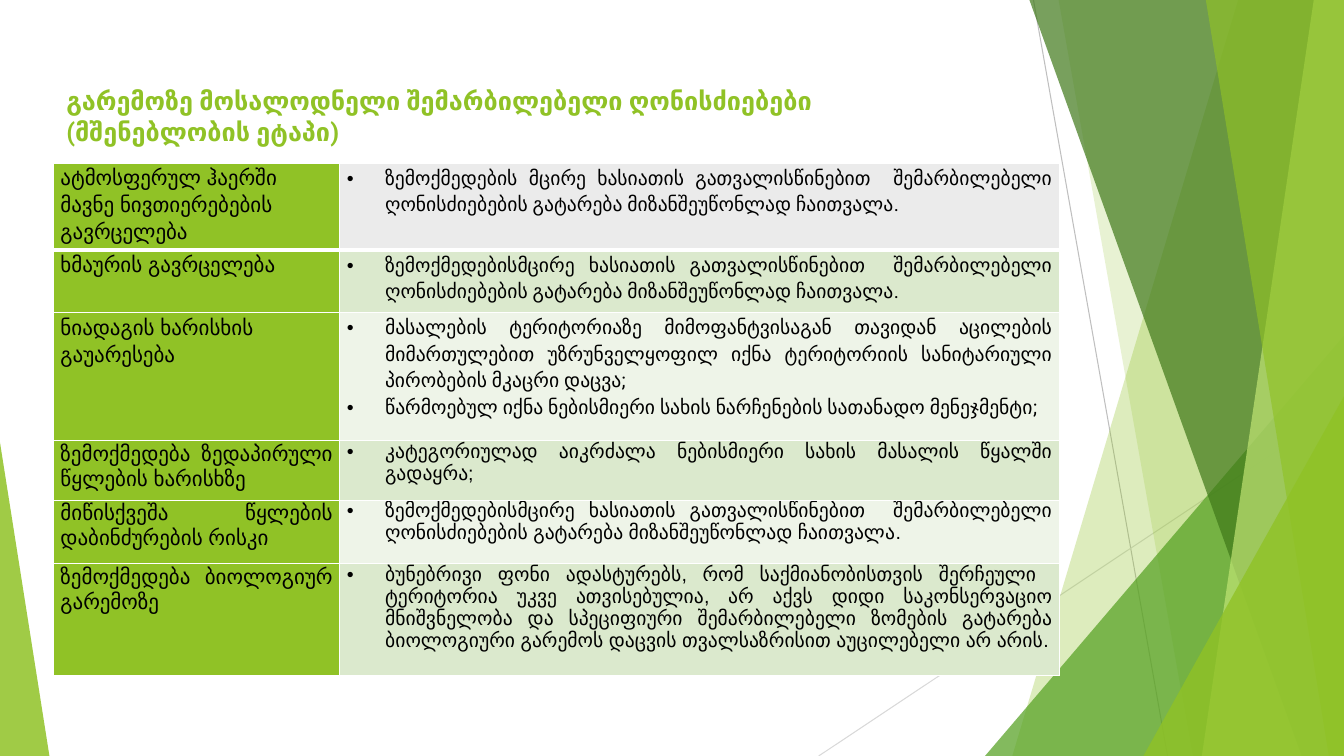
from dataclasses import dataclass

from lxml.etree import SubElement
from pptx import Presentation
from pptx.dml.color import RGBColor
from pptx.enum.shapes import MSO_CONNECTOR, MSO_SHAPE
from pptx.enum.text import MSO_ANCHOR, PP_ALIGN as Align
from pptx.oxml import parse_xml
from pptx.oxml.ns import nsdecls, qn
from pptx.util import Emu, Pt

PX = 9144  # 100 px to the inch
WIDTH, HEIGHT = 1333, 750
LIME, WHITE, BLACK = "90C226", "FFFFFF", "000000"
HEADER_GRAY, BAND_DARK, BAND_LIGHT = "EBEBEB", "DBE9CD", "EEF4E8"
INDENT = 38
TITLE = "გარემოზე მოსალოდნელი შემარბილებელი ღონისძიებები (მშენებლობის ეტაპი)"


@dataclass
class Ray:
    start: tuple[int, int]
    end: tuple[int, int]
    color: str


@dataclass
class Facet:
    """Quadrilateral between a slanted left edge and the right slide edge."""
    top_x: int
    bottom_x: int
    color: str
    opacity: int


@dataclass
class Wedge:
    """Right triangle; apex 0 puts its tip at the left, 1 at the right."""
    left: int
    top: int
    width: int
    apex: int
    color: str
    opacity: int


@dataclass
class TextStyle:
    size: int
    font: str
    spacing: float
    align: Align
    bullet: bool = False


@dataclass
class Impact:
    height: int
    topic: str
    measures: list[str]
    fill: str
    topic_style: TextStyle
    measure_style: TextStyle


RAYS = [Ray((1025, 0), (1158, 750), "BFBFBF"), Ray((1333, 403), (812, 750), "D9D9D9")]
DECOR = [
    Facet(1228, 1004, LIME, 30),
    Facet(1050, 1183, LIME, 20),
    Wedge(977, 333, 356, 1, "54A021", 72),
    Facet(1021, 1291, "3F7819", 70),
    Facet(1303, 1192, "C0E474", 70),
    Facet(1196, 1318, LIME, 65),
    Wedge(1134, 393, 199, 1, LIME, 80),
    Wedge(0, 439, 49, 0, LIME, 85),
]

LOOSE_TOPIC = TextStyle(15, "Arial", 1.15, Align.LEFT)
TIGHT_TOPIC = TextStyle(15, "Arial", 1.07, Align.JUSTIFY)
LOOSE_MEASURE = TextStyle(14, "Roboto", 1.15, Align.JUSTIFY, True)
TIGHT_MEASURE = TextStyle(14, "Arial", 1.0, Align.JUSTIFY, True)
LOOSE = (LOOSE_TOPIC, LOOSE_MEASURE)
TIGHT = (TIGHT_TOPIC, TIGHT_MEASURE)

MINOR_TAIL = "მცირე ხასიათის გათვალისწინებით  შემარბილებელი ღონისძიებების გატარება მიზანშეუწონლად ჩაითვალა."
MINOR_IMPACT = "ზემოქმედების" + MINOR_TAIL
IMPACTS = [
    Impact(83, "ატმოსფერულ ჰაერში მავნე ნივთიერებების გავრცელება",
           ["ზემოქმედების " + MINOR_TAIL], HEADER_GRAY, *LOOSE),
    Impact(62, "ხმაურის გავრცელება", [MINOR_IMPACT], BAND_DARK, *LOOSE),
    Impact(127, "ნიადაგის ხარისხის გაუარესება",
           ["მასალების ტერიტორიაზე მიმოფანტვისაგან თავიდან აცილების მიმართულებით "
            "უზრუნველყოფილ იქნა ტერიტორიის სანიტარიული პირობების მკაცრი დაცვა;",
            "წარმოებულ იქნა ნებისმიერი სახის ნარჩენების სათანადო მენეჯმენტი;"],
           BAND_LIGHT, *LOOSE),
    Impact(59, "ზემოქმედება ზედაპირული წყლების ხარისხზე",
           ["კატეგორიულად აიკრძალა ნებისმიერი სახის მასალის წყალში გადაყრა;"],
           BAND_DARK, *TIGHT),
    Impact(63, "მიწისქვეშა წყლების დაბინძურების რისკი", [MINOR_IMPACT], BAND_LIGHT, *TIGHT),
    Impact(111, "ზემოქმედება ბიოლოგიურ გარემოზე",
           ["ბუნებრივი ფონი ადასტურებს, რომ საქმიანობისთვის შერჩეული  ტერიტორია უკვე "
            "ათვისებულია, არ აქვს დიდი საკონსერვაციო მნიშვნელობა და სპეციფიური "
            "შემარბილებელი ზომების გატარება ბიოლოგიური გარემოს დაცვის თვალსაზრისით "
            "აუცილებელი არ არის."], BAND_DARK, *TIGHT),
]


def px(*lengths: int) -> list[Emu]:
    return [Emu(length * PX) for length in lengths]


def paint(fill, color: str) -> None:
    fill.solid()
    fill.fore_color.rgb = RGBColor.from_string(color)


def draw_ray(slide, ray: Ray) -> None:
    line = slide.shapes.add_connector(MSO_CONNECTOR.STRAIGHT, *px(*ray.start, *ray.end))
    paint(line.line.fill, ray.color)
    line.line.width = Pt(0.75)
    SubElement(line._element.spPr, qn("a:effectLst"))


def draw_decor(slide, part: Facet | Wedge) -> None:
    if isinstance(part, Facet):
        outline = slide.shapes.build_freeform(part.top_x, 0, scale=PX)
        outline.add_line_segments([(WIDTH, 0), (WIDTH, HEIGHT), (part.bottom_x, HEIGHT)])
        shape = outline.convert_to_shape()
    else:
        shape = slide.shapes.add_shape(
            MSO_SHAPE.ISOSCELES_TRIANGLE,
            *px(part.left, part.top, part.width, HEIGHT - part.top))
        shape.adjustments[0] = part.apex
    paint(shape.fill, part.color)
    tint = shape._element.spPr.find(qn("a:solidFill"))[0]
    SubElement(tint, qn("a:alpha"), val=str(part.opacity * 1000))
    shape.line.fill.background()
    shape.shadow.inherit = False


def format_font(paragraph, size: int, name: str, color: str, bold: bool = False) -> None:
    for run in paragraph.runs:
        run.font.size, run.font.name, run.font.bold = Pt(size), name, bold
        run.font.color.rgb = RGBColor.from_string(color)


def draw_title(slide) -> None:
    frame = slide.shapes.add_textbox(*px(56, 80, 940, 55)).text_frame
    frame.word_wrap = True
    frame.text = TITLE
    format_font(frame.paragraphs[0], 18, "Roboto", LIME, True)


def add_bullet(paragraph) -> None:
    properties = paragraph._p.get_or_add_pPr()
    properties.set("marL", str(INDENT * PX))
    properties.set("indent", str(-INDENT * PX))
    SubElement(properties, qn("a:buFont"), typeface="Arial")
    SubElement(properties, qn("a:buChar"), char="•")


def set_borders(cell, top: int, bottom: int) -> None:
    """Give the cell white borders; widths in points, sides always 1."""
    widths = {"lnL": 1, "lnR": 1, "lnT": top, "lnB": bottom}
    for place, (tag, width) in enumerate(widths.items()):
        border = parse_xml(
            f'<a:{tag} {nsdecls("a")} w="{Pt(width)}"><a:solidFill>'
            f'<a:srgbClr val="{WHITE}"/></a:solidFill></a:{tag}>')
        cell._tc.get_or_add_tcPr().insert(place, border)


def fill_cell(cell, lines: list[str], style: TextStyle, color: str) -> None:
    cell.margin_left, cell.margin_right, cell.margin_top, cell.margin_bottom = px(7, 7, 0, 0)
    cell.vertical_anchor = MSO_ANCHOR.TOP
    paint(cell.fill, color)
    cell.text_frame.text = "\n".join(lines)
    for paragraph in cell.text_frame.paragraphs:
        paragraph.alignment = style.align
        paragraph.line_spacing = style.spacing
        if style.bullet:
            add_bullet(paragraph)
        format_font(paragraph, style.size, style.font, BLACK)


def draw_impacts(slide) -> None:
    total = sum(impact.height for impact in IMPACTS)
    table = slide.shapes.add_table(len(IMPACTS), 2, *px(53, 162, 998, total)).table
    table.first_row = table.horz_banding = False
    table.columns[0].width, table.columns[1].width = px(284, 714)
    for index, impact in enumerate(IMPACTS):
        row = table.rows[index]
        row.height = px(impact.height)[0]
        topic, measures = row.cells
        fill_cell(topic, [impact.topic], impact.topic_style, LIME)
        fill_cell(measures, impact.measures, impact.measure_style, impact.fill)
        for cell in (topic, measures):
            set_borders(cell, 3 if index == 1 else 1, 3 if index == 0 else 1)


def main() -> None:
    deck = Presentation()
    deck.slide_width, deck.slide_height = px(WIDTH, HEIGHT)
    slide = deck.slides.add_slide(deck.slide_layouts[6])
    for ray in RAYS:
        draw_ray(slide, ray)
    for part in DECOR:
        draw_decor(slide, part)
    draw_title(slide)
    draw_impacts(slide)
    deck.save("out.pptx")


if __name__ == "__main__":
    main()
